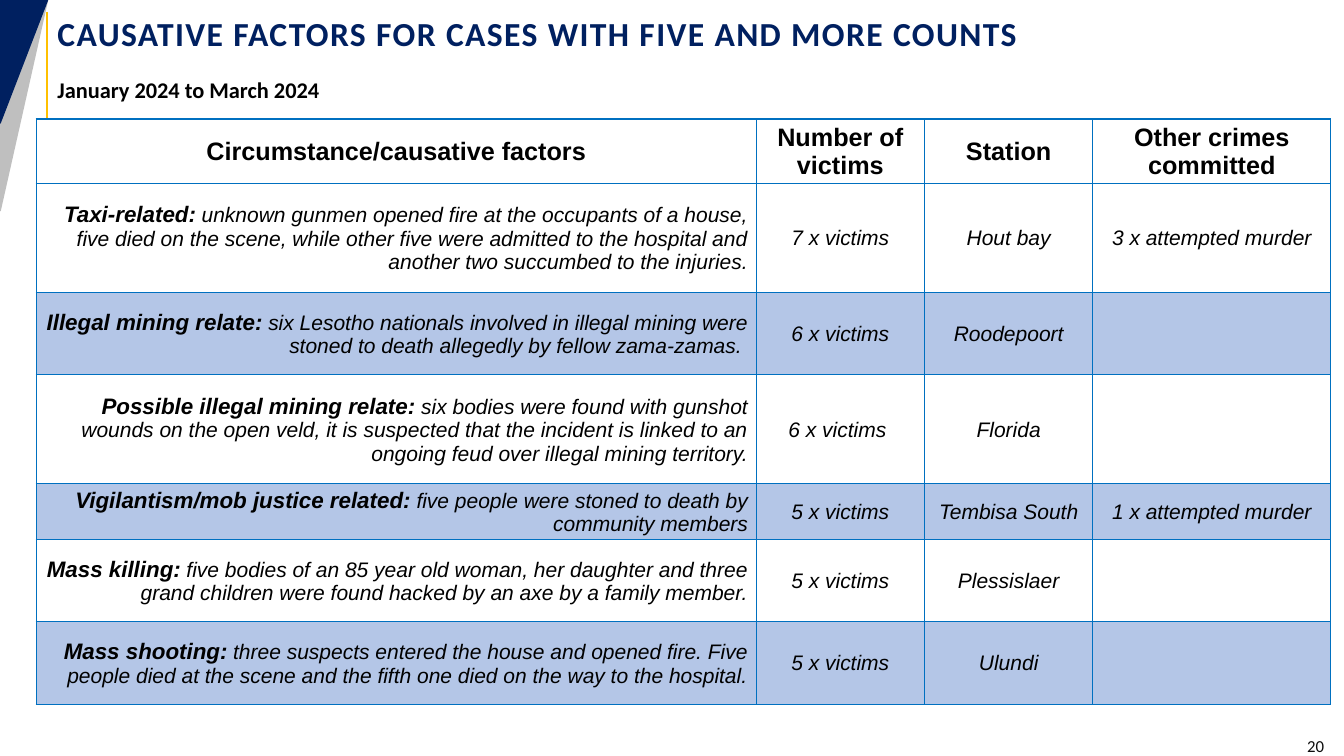
from lxml.etree import SubElement
from pptx import Presentation
from pptx.dml.color import RGBColor
from pptx.enum.shapes import MSO_CONNECTOR as Connector, MSO_SHAPE as Shape
from pptx.enum.text import MSO_ANCHOR as Anchor, PP_ALIGN as Align
from pptx.oxml.ns import qn
from pptx.util import Inches, Pt

TITLE = "CAUSATIVE FACTORS FOR CASES WITH FIVE AND MORE COUNTS"
PERIOD = "January 2024 to March 2024"
PAGE_NUMBER = "20"
HEADERS = ["Circumstance/causative factors", "Number of victims", "Station", "Other crimes committed"]
CASES = [
    ("Taxi-related:",
     "unknown gunmen opened fire at the occupants of a house, five died on the scene, while other five "
     "were admitted to the hospital and another two succumbed to the injuries.",
     "7 x victims", "Hout bay", "3 x attempted murder"),
    ("Illegal mining relate:",
     "six Lesotho nationals involved in illegal mining were stoned to death allegedly by fellow zama-zamas. ",
     "6 x victims", "Roodepoort", ""),
    ("Possible illegal mining relate:",
     "six bodies were found with gunshot wounds on the open veld, it is suspected that the incident is "
     "linked to an ongoing feud over illegal mining territory.",
     "6 x victims ", "Florida", ""),
    ("Vigilantism/mob justice related:",
     "five people were stoned to death by community members",
     "5 x victims", "Tembisa South", "1 x attempted murder"),
    ("Mass killing:",
     "five bodies of an 85 year old woman, her daughter and three grand children were found hacked by "
     "an axe by a family member.",
     "5 x victims", "Plessislaer", ""),
    ("Mass shooting:",
     "three suspects entered the house and opened fire. Five people died at the scene and the fifth one "
     "died on the way to the hospital.",
     "5 x victims", "Ulundi", ""),
]
COLUMN_WIDTHS = [7.14, 1.67, 1.67, 2.36]
ROW_HEIGHTS = [0.64, 1.08, 0.82, 1.08, 0.55, 0.82, 0.82]
CORNER_TRIANGLES = [("grey", 2.09), ("navy", 1.22)]
CORNER_WIDTH = 0.47
COLORS = {
    "navy": "002060",
    "grey": "BFBFBF",
    "gold": "FFC000",
    "border": "0070C0",
    "band": "B4C6E7",
    "black": "000000",
    "number": "0D0D0D",
}


def color(name):
    return RGBColor.from_string(COLORS[name])


def add_run(paragraph, text, size, font="Arial", color_name="black", bold=False, italic=False):
    run = paragraph.add_run()
    run.text = text
    run.font.name = font
    run.font.size = Pt(size)
    run.font.bold = bold
    run.font.italic = italic
    run.font.color.rgb = color(color_name)
    return run


def place(shape, left, top, width, height):
    shape.left, shape.top = Inches(left), Inches(top)
    shape.width, shape.height = Inches(width), Inches(height)


def add_corner(slide):
    for name, height in CORNER_TRIANGLES:
        triangle = slide.shapes.add_shape(
            Shape.RIGHT_TRIANGLE, 0, 0, Inches(CORNER_WIDTH), Inches(height))
        triangle._element.spPr.find(qn("a:xfrm")).set("flipV", "1")
        triangle.shadow.inherit = False
        triangle.fill.solid()
        triangle.fill.fore_color.rgb = color(name)
        triangle.line.color.rgb = color(name)
        triangle.line.width = Pt(1.25)
    rule = slide.shapes.add_connector(
        Connector.STRAIGHT, Inches(CORNER_WIDTH), Inches(1.17), Inches(CORNER_WIDTH), Inches(0.12))
    rule.line.color.rgb = color("gold")
    rule.line.width = Pt(1.25)
    SubElement(rule._element.spPr, qn("a:effectLst"))


def add_headings(slide):
    title = slide.shapes.title
    place(title, CORNER_WIDTH, 0.12, 11.96, 0.49)
    title.text_frame.vertical_anchor = Anchor.MIDDLE
    paragraph = title.text_frame.paragraphs[0]
    paragraph.alignment = Align.LEFT
    paragraph.line_spacing = 0.8
    run = add_run(paragraph, TITLE, 24, "Calibri", "navy", bold=True)
    run.font._element.set("spc", "100")

    period = slide.placeholders[1]
    place(period, CORNER_WIDTH, 0.68, 11.96, 0.48)
    period.text_frame.vertical_anchor = Anchor.TOP
    paragraph = period.text_frame.paragraphs[0]
    paragraph.line_spacing = 1.08
    paragraph.space_before = Pt(6)
    paragraph.space_after = Pt(2)
    properties = paragraph._p.get_or_add_pPr()
    properties.set("marL", "0")
    properties.set("indent", "0")
    SubElement(properties, qn("a:buNone"))
    add_run(paragraph, PERIOD, 16, "Calibri", bold=True)


def add_page_number(slide):
    box = slide.shapes.add_textbox(Inches(11.85), Inches(7.27), Inches(1.38), Inches(0.26))
    box.text_frame.word_wrap = True
    box.text_frame.vertical_anchor = Anchor.MIDDLE
    paragraph = box.text_frame.paragraphs[0]
    paragraph.alignment = Align.RIGHT
    add_run(paragraph, PAGE_NUMBER, 12, "Calibri", "number")


def format_cell(cell, banded, right_margin, alignment):
    cell.vertical_anchor = Anchor.MIDDLE
    cell.margin_left = cell.margin_top = Inches(0.01)
    cell.margin_right, cell.margin_bottom = Inches(right_margin), 0
    properties = cell._tc.get_or_add_tcPr()
    for side in ("a:lnL", "a:lnR", "a:lnT", "a:lnB"):
        border = SubElement(properties, qn(side), w=str(Pt(1)))
        fill = SubElement(border, qn("a:solidFill"))
        SubElement(fill, qn("a:srgbClr"), val=COLORS["border"])
    if banded:
        cell.fill.solid()
        cell.fill.fore_color.rgb = color("band")
    else:
        cell.fill.background()
    paragraph = cell.text_frame.paragraphs[0]
    paragraph.alignment = alignment
    return paragraph


def add_case_table(slide):
    frame = slide.shapes.add_table(
        len(ROW_HEIGHTS), len(COLUMN_WIDTHS), Inches(0.36), Inches(1.18),
        Inches(sum(COLUMN_WIDTHS)), Inches(sum(ROW_HEIGHTS)))
    table = frame.table
    table.horz_banding = False
    for column, width in zip(table.columns, COLUMN_WIDTHS):
        column.width = Inches(width)
    for row, height in zip(table.rows, ROW_HEIGHTS):
        row.height = Inches(height)

    for column, header in enumerate(HEADERS):
        paragraph = format_cell(table.cell(0, column), False, 0.01, Align.CENTER)
        add_run(paragraph, header, 18, bold=True)

    for row, (label, story, *details) in enumerate(CASES, start=1):
        banded = row % 2 == 0
        paragraph = format_cell(table.cell(row, 0), banded, 0.08, Align.RIGHT)
        add_run(paragraph, label, 16, bold=True, italic=True)
        add_run(paragraph, " ", 14, italic=True)
        add_run(paragraph, story, 15, italic=True)
        for column, detail in enumerate(details, start=1):
            paragraph = format_cell(table.cell(row, column), banded, 0.01, Align.CENTER)
            if detail:
                add_run(paragraph, detail, 15, italic=True)


def main():
    presentation = Presentation()
    presentation.slide_width = Inches(13.33)
    presentation.slide_height = Inches(7.5)
    slide = presentation.slides.add_slide(presentation.slide_layouts[1])
    add_corner(slide)
    add_page_number(slide)
    add_headings(slide)
    add_case_table(slide)
    presentation.save("out.pptx")


if __name__ == "__main__":
    main()
